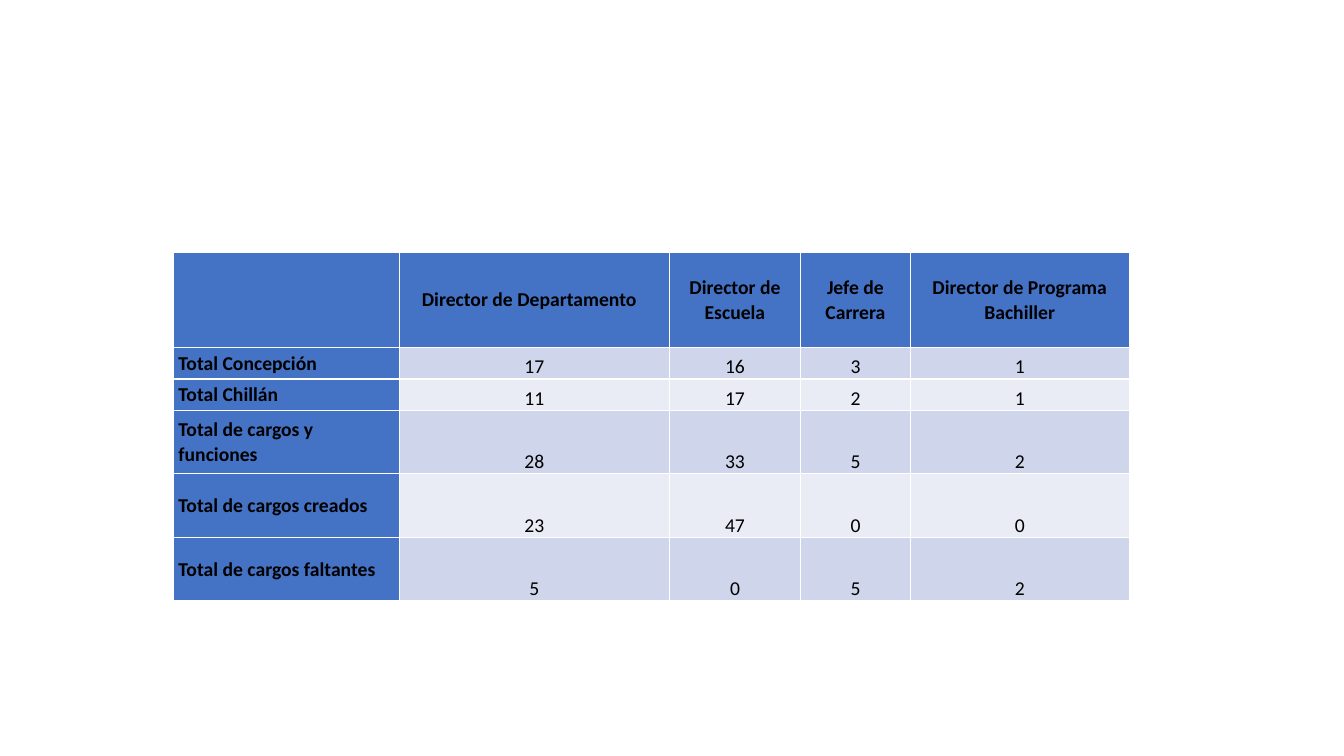
import pptx
import pptx.util
import pptx.dml.color
import pptx.enum.text

Inches = pptx.util.Inches
RGBColor = pptx.dml.color.RGBColor
ANCHOR = pptx.enum.text.MSO_ANCHOR
ALIGN = pptx.enum.text.PP_ALIGN

BLUE = RGBColor(0x44, 0x72, 0xC4)
BAND_DARK = RGBColor(0xCF, 0xD5, 0xEA)
BAND_LIGHT = RGBColor(0xE9, 0xEB, 0xF5)
BLACK = RGBColor(0x00, 0x00, 0x00)

ROWS = [
    ["", "Director de Departamento", "Director de Escuela", "Jefe de Carrera",
     "Director de Programa Bachiller"],
    ["Total Concepción", "17", "16", "3", "1"],
    ["Total Chillán", "11", "17", "2", "1"],
    ["Total de cargos y funciones", "28", "33", "5", "2"],
    ["Total de cargos creados", "23", "47", "0", "0"],
    ["Total de cargos faltantes", "5", "0", "5", "2"],
]
COLUMN_WIDTHS = [2.24, 2.68, 1.3, 1.09, 2.17]
ROW_HEIGHTS = [0.95, 0.31, 0.31, 0.63, 0.63, 0.63]

deck = pptx.Presentation()
deck.slide_width = Inches(13.33)
deck.slide_height = Inches(7.5)
page = deck.slides.add_slide(deck.slide_layouts[6])

table = page.shapes.add_table(
    len(ROWS), len(COLUMN_WIDTHS), Inches(1.72), Inches(2.5),
    Inches(sum(COLUMN_WIDTHS)), Inches(sum(ROW_HEIGHTS))).table
table.first_col = True
for column, width in zip(table.columns, COLUMN_WIDTHS):
    column.width = Inches(width)
for row, height in zip(table.rows, ROW_HEIGHTS):
    row.height = Inches(height)

for row_number, texts in enumerate(ROWS):
    for column_number, text in enumerate(texts):
        is_heading = row_number == 0 or column_number == 0
        band = BAND_DARK if row_number % 2 else BAND_LIGHT
        cell = table.cell(row_number, column_number)
        cell.fill.solid()
        cell.fill.fore_color.rgb = BLUE if is_heading else band
        cell_format = {
            "margin_left": Inches(0.05), "margin_right": Inches(0.05),
            "margin_top": 0, "margin_bottom": 0,
            "vertical_anchor": ANCHOR.MIDDLE if is_heading else ANCHOR.BOTTOM,
        }
        for name, value in cell_format.items():
            setattr(cell, name, value)
        cell.text = text
        para = cell.text_frame.paragraphs[0]
        para.alignment = ALIGN.CENTER if column_number else ALIGN.LEFT
        para.line_spacing = 1.03
        font_format = {"name": "Calibri", "size": pptx.util.Pt(14), "bold": is_heading}
        for span in para.runs:
            for name, value in font_format.items():
                setattr(span.font, name, value)
            span.font.color.rgb = BLACK

table.cell(0, 1).margin_right = Inches(0.15)

deck.save("out.pptx")
